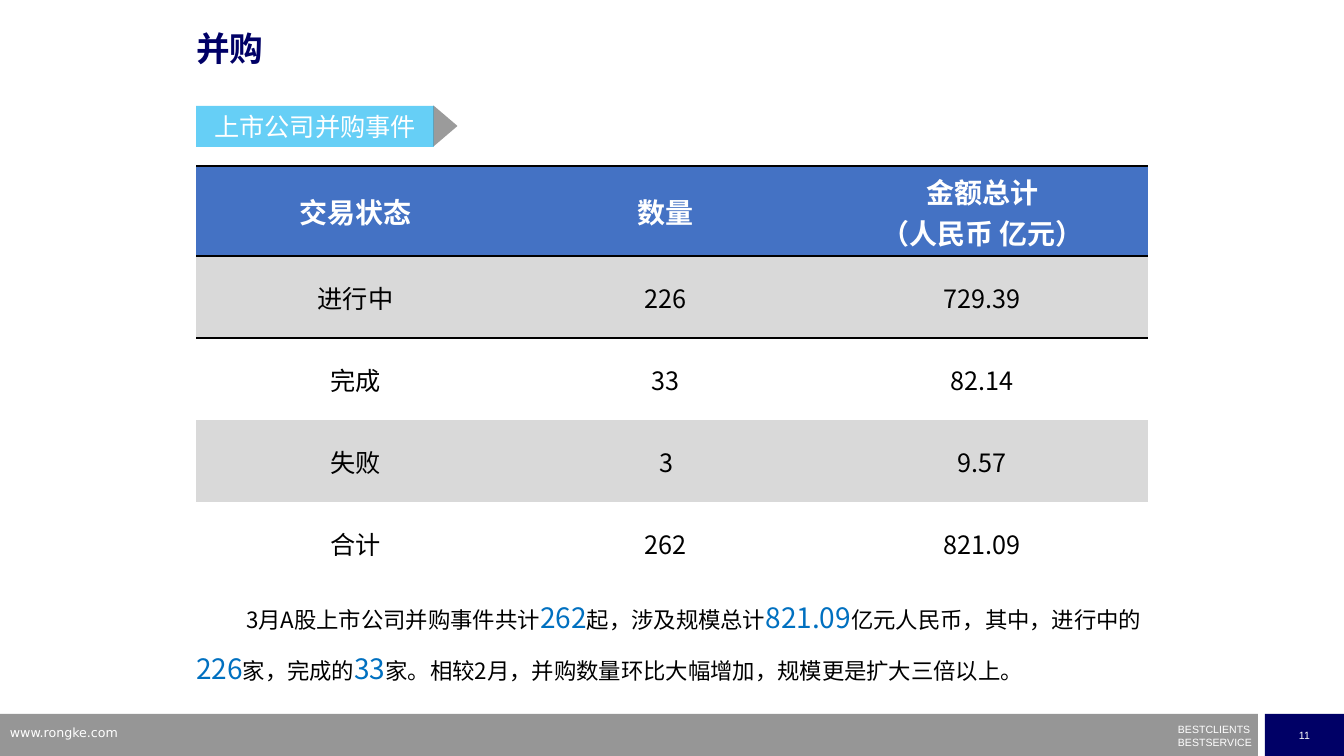
from lxml.etree import SubElement
from pptx import Presentation
from pptx.dml.color import RGBColor
from pptx.enum.shapes import MSO_SHAPE
from pptx.enum.text import MSO_ANCHOR, PP_ALIGN
from pptx.oxml.ns import qn
from pptx.util import Pt

EMU = 914400 / 100.8
WHITE = RGBColor(0xFF, 0xFF, 0xFF)
BLACK = RGBColor(0, 0, 0)
NAVY = RGBColor(0, 0, 0x66)
GRAY = RGBColor(0x96, 0x96, 0x96)
DARK = RGBColor(0x59, 0x59, 0x59)
SKY = RGBColor(0, 0xB0, 0xF0)
HEAD = RGBColor(0x44, 0x72, 0xC4)
BAND = RGBColor(0xD9, 0xD9, 0xD9)
BLUE = RGBColor(0, 0x70, 0xC0)
CJK = "Noto Sans CJK SC"
PLAIN = "{2D5ABB26-0587-4C30-8999-92F81FD0307C}"


def px(n):
    return round(n * EMU)


class Page:
    def __init__(self, deck):
        self.slide = deck.slides.add_slide(deck.slide_layouts[5])
        self.shapes = self.slide.shapes

    def style(self, run, size, color, font=CJK, bold=False):
        run.font.size, run.font.bold, run.font.name = Pt(size), bold, font
        run.font.color.rgb = color
        SubElement(run.font._element, qn("a:ea"), typeface=font)

    def put(self, frame, text, size, color, font=CJK, bold=False, align=PP_ALIGN.LEFT):
        frame.text = text
        for para in frame.paragraphs:
            para.alignment = align
            for run in para.runs:
                self.style(run, size, color, font, bold)

    def bare(self, frame):
        frame.margin_left = frame.margin_right = 0
        frame.margin_top = frame.margin_bottom = 0

    def shape(self, kind, box, color, alpha=None):
        item = self.shapes.add_shape(kind, *map(px, box))
        item.shadow.inherit = False
        item.fill.solid()
        item.fill.fore_color.rgb = color
        item.line.fill.background()
        if alpha:
            tint = item._element.spPr.find(qn("a:solidFill"))[0]
            SubElement(tint, qn("a:alpha"), val=str(alpha * 1000))
        return item

    def label(self, item, text, size, font=CJK):
        frame = item.text_frame
        frame.vertical_anchor = MSO_ANCHOR.MIDDLE
        self.put(frame, text, size, WHITE, font, align=PP_ALIGN.CENTER)

    def text(self, box):
        frame = self.shapes.add_textbox(*map(px, box)).text_frame
        frame.word_wrap = True
        return frame

    def title(self, box, text):
        item = self.shapes.title
        item.left, item.top, item.width, item.height = map(px, box)
        frame = item.text_frame
        self.bare(frame)
        frame.vertical_anchor = MSO_ANCHOR.BOTTOM
        self.put(frame, text, 24, NAVY, bold=True)
        frame.paragraphs[0].line_spacing = 0.9

    def rule(self, cell, side):
        line = SubElement(cell._tc.get_or_add_tcPr(), qn("a:" + side), w=str(Pt(1)))
        fill = SubElement(line, qn("a:solidFill"))
        SubElement(fill, qn("a:srgbClr"), val=str(BLACK))

    def table(self, left, top, cols, rows, data):
        frame = self.shapes.add_table(len(rows), len(cols), px(left), px(top),
                                      px(sum(cols)), px(sum(rows)))
        grid = frame.table
        grid._tbl.tblPr.find(qn("a:tableStyleId")).text = PLAIN
        for col, width in zip(grid.columns, cols):
            col.width = px(width)
        for i, (row, high, line) in enumerate(zip(grid.rows, rows, data)):
            row.height = px(high)
            for cell, text in zip(row.cells, line):
                first = i == 0
                cell.margin_left = cell.margin_right = cell.margin_top = px(1)
                cell.margin_bottom = 0
                cell.vertical_anchor = MSO_ANCHOR.MIDDLE
                self.put(cell.text_frame, text, 20 if first else 18,
                         WHITE if first else BLACK, bold=first, align=PP_ALIGN.CENTER)
                if i < 2:
                    self.rule(cell, "lnT")
                if first:
                    self.rule(cell, "lnB")
                cell.fill.solid()
                cell.fill.fore_color.rgb = HEAD if first else BAND if i % 2 else WHITE

    def prose(self, box, parts):
        frame = self.text(box)
        self.bare(frame)
        para = frame.paragraphs[0]
        para.line_spacing = 1.5
        para._p.get_or_add_pPr().set("indent", str(px(50)))
        for i, part in enumerate(parts):
            run = para.add_run()
            run.text = part
            self.style(run, *((20, BLUE) if i % 2 else (16, BLACK)))


def main():
    deck = Presentation()
    deck.slide_width, deck.slide_height = px(1344), px(756)
    page = Page(deck)

    # Footer
    page.shape(MSO_SHAPE.RECTANGLE, (0, 714, 1258, 42), GRAY)
    number = page.shape(MSO_SHAPE.RECTANGLE, (1265, 714, 79, 42), NAVY)
    page.label(number, "11", 7.5, "Arial")
    motto = page.text((1178, 723, 77, 24))
    page.bare(motto)
    page.put(motto, "BESTCLIENTS\nBESTSERVICE", 7.5, WHITE, "Arial")
    page.put(page.text((0, 720, 323, 26)), "www.rongke.com", 9, WHITE, "DejaVu Sans")

    # Title and section tag
    page.title((196, 30, 907, 39), "并购")
    tag = page.shape(MSO_SHAPE.RECTANGLE, (196, 106, 238, 41), SKY, 60)
    page.label(tag, "上市公司并购事件", 18)
    tip = page.shape(MSO_SHAPE.ISOSCELES_TRIANGLE, (425, 114, 41, 24), DARK, 60)
    tip.rotation = 90
    page.shapes.add_group_shape([tag, tip])

    # Deal table
    page.table(196, 166, (319, 302, 331), (90, 82, 82, 82, 82), (
        ("交易状态", "数量", "金额总计\v（人民币 亿元）"),
        ("进行中", "226", "729.39"),
        ("完成", "33", "82.14"),
        ("失败", "3", "9.57"),
        ("合计", "262", "821.09"),
    ))

    # Summary, with every second part a figure
    page.prose((196, 584, 952, 102), (
        "3月A股上市公司并购事件共计", "262", "起，涉及规模总计", "821.09",
        "亿元人民币，其中，进行中的", "226", "家，完成的", "33",
        "家。相较2月，并购数量环比大幅增加，规模更是扩大三倍以上。",
    ))
    deck.save("out.pptx")


if __name__ == "__main__":
    main()
